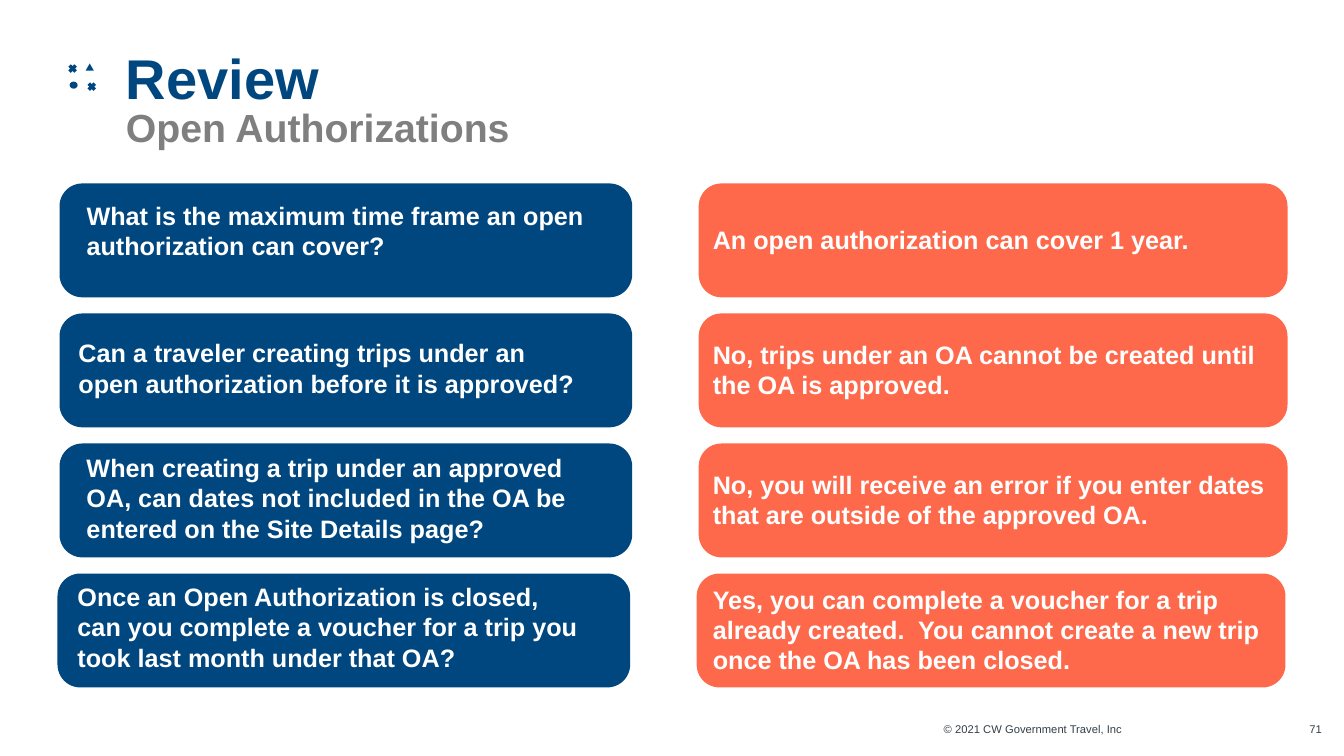
import pptx
import pptx.dml.color
import pptx.enum.shapes
import pptx.enum.text
import pptx.oxml
import pptx.oxml.ns
import pptx.util

Inches = pptx.util.Inches
Pt = pptx.util.Pt
RGBColor = pptx.dml.color.RGBColor
Shape = pptx.enum.shapes.MSO_SHAPE
Align = pptx.enum.text.PP_ALIGN
Anchor = pptx.enum.text.MSO_ANCHOR

NAVY = RGBColor(0x00, 0x46, 0x7F)
CORAL = RGBColor(0xFF, 0x69, 0x4B)
GRAY = RGBColor(0x7F, 0x7F, 0x7F)
SLATE = RGBColor(0x33, 0x3F, 0x48)
WHITE = RGBColor(0xFF, 0xFF, 0xFF)

TITLE = {"size": Pt(40), "bold": True, "color": NAVY}
SUBTITLE = {"size": Pt(28), "bold": True, "color": GRAY}
CARD_TEXT = {"size": Pt(18), "bold": True, "color": WHITE}
FOOTER = {"size": Pt(8), "bold": False, "color": SLATE}

HEAD = [
    (1.05, 0.73), (1.05, 0.8), (1.03, 0.87), (1, 0.93), (0.98, 1.01),
    (0.98, 1.07), (0.92, 1.11), (0.85, 1.14), (0.79, 1.18), (0.77, 1.14),
    (0.74, 1.1), (0.69, 1.08), (0.61, 1.07), (0.57, 1.04), (0.56, 1),
    (0.55, 0.95), (0.55, 0.91), (0.51, 0.89), (0.52, 0.85), (0.55, 0.8),
    (0.56, 0.75), (0.58, 0.69), (0.61, 0.61), (0.66, 0.56), (0.72, 0.54),
    (0.79, 0.52), (0.88, 0.54), (0.95, 0.58), (1.01, 0.64),
]
ROUTE = [(0.73, 0.85), (0.75, 0.8), (0.8, 0.78), (0.86, 0.74), (0.89, 0.69)]
CROSSES = [(0.72, 0.68), (0.91, 0.86)]

REVIEW = [
    ("What is the maximum time frame an open authorization can cover?",
     (0.17, 0.12, 5.32, 0.71), "An open authorization can cover 1 year."),
    ("Can a traveler creating trips under an open authorization before it is approved?",
     (0.09, 0.19, 5.24, 0.71),
     "No, trips under an OA cannot be created until the OA is approved."),
    ("When creating a trip under an approved OA, can dates not included in the OA be "
     "entered on the Site Details page?", (0.17, 0.04, 5.24, 1.01),
     "No, you will receive an error if you enter dates that are outside of the approved OA."),
    ("Once an Open Authorization is closed, can you complete a voucher for a trip you "
     "took last month under that OA?", (0.08, 0.03, 5.25, 1.01),
     "Yes, you can complete a voucher for a trip already created.  You cannot create "
     "a new trip once the OA has been closed."),
]


def add_span(para, text, style):
    """Add a run of text in the given style."""
    span = para.add_run()
    span.text = text
    span.font.name = "Arial"
    span.font.color.rgb = style["color"]
    for name in ("size", "bold"):
        setattr(span.font, name, style[name])


def add_text(page, box, text, style, inset=(0, 0), anchor=Anchor.TOP, align=Align.LEFT):
    """Add a wrapped text box and return its paragraph."""
    frame = page.shapes.add_textbox(*map(Inches, box)).text_frame
    across, down = map(Inches, inset)
    settings = {"word_wrap": True, "vertical_anchor": anchor, "margin_left": across,
                "margin_right": across, "margin_top": down, "margin_bottom": down}
    for name, value in settings.items():
        setattr(frame, name, value)
    para = frame.paragraphs[0]
    para.alignment = align
    add_span(para, text, style)
    return para


def add_solid(page, kind, box, color):
    """Add a filled preset shape without outline."""
    shape = page.shapes.add_shape(kind, *map(Inches, box))
    shape.shadow.inherit = False
    shape.fill.solid()
    shape.fill.fore_color.rgb = color
    shape.line.fill.background()
    return shape


def add_stroke(page, points, width, closed):
    """Add an unfilled navy outline through the points."""
    builder = page.shapes.build_freeform(*points[0], scale=Inches(1))
    builder.add_line_segments(points[1:], close=closed)
    stroke = builder.convert_to_shape()
    stroke.shadow.inherit = False
    stroke.fill.background()
    stroke.line.color.rgb = NAVY
    stroke.line.width = Pt(width)


def add_cross(page, center, reach):
    """Draw a small cross from two connectors."""
    x, y = center
    for rise in (reach, -reach):
        ends = (x - reach, y - rise, x + reach, y + rise)
        bar = page.shapes.add_connector(
            pptx.enum.shapes.MSO_CONNECTOR.STRAIGHT, *map(Inches, ends))
        bar.line.color.rgb = NAVY
        bar.line.width = Pt(2.5)
        bar.element.spPr.append(
            pptx.oxml.parse_xml(f"<a:effectLst {pptx.oxml.ns.nsdecls('a')}/>"))


def add_header(page, box):
    """Place the strategy icon and the two-line title."""
    add_stroke(page, HEAD, 3.6, True)
    add_stroke(page, ROUTE, 2, False)
    add_solid(page, Shape.OVAL, (0.69, 0.81, 0.08, 0.07), NAVY)
    add_solid(page, Shape.ISOSCELES_TRIANGLE, (0.85, 0.63, 0.08, 0.07), NAVY)
    for center in CROSSES:
        add_cross(page, center, 0.03)
    para = add_text(page, box, "Review", TITLE)
    para.line_spacing = 0.85
    para.add_line_break()
    add_span(para, "Open Authorizations", SUBTITLE)


def add_review_row(page, box, shift, question, question_box, answer):
    """Place a question card and its answer card in the row box."""
    left, top, width, height = box
    question_width, answer_width = 5.68, 5.84
    answer_left = left + width - answer_width
    cards = [(left, question_width, NAVY), (answer_left, answer_width, CORAL)]
    for card_left, card_width, color in cards:
        card = add_solid(page, Shape.ROUNDED_RECTANGLE,
                         (card_left + shift, top, card_width, height), color)
        card.adjustments[0] = 0.2
    x, y, text_width, text_height = question_box
    add_text(page, (left + x, top + y, text_width, text_height),
             question, CARD_TEXT, inset=(0.1, 0.05))
    add_text(page, (answer_left + 0.14, top - 0.01, 5.7, height),
             answer, CARD_TEXT, anchor=Anchor.MIDDLE)


def add_footer(page, box):
    """Place the copyright line and the page number."""
    left, top, width, height = box
    add_text(page, (left, top, 2.75, height), "© 2021 CW Government Travel, Inc",
             FOOTER, align=Align.RIGHT)
    add_text(page, (left + width - 0.23, top, 0.23, height), "71",
             FOOTER, align=Align.RIGHT)


def main():
    """Build the review slide and save it."""
    deck = pptx.Presentation()
    deck.slide_width, deck.slide_height = Inches(13.33), Inches(7.5)
    page = deck.slides.add_slide(deck.slide_layouts[6])
    add_header(page, (1.25, 0.53, 11.53, 0.92))
    for row, content in enumerate(REVIEW):
        shift = -0.02 if row == len(REVIEW) - 1 else 0
        add_review_row(page, (0.59, 1.82 + 1.29 * row, 12.18, 1.13), shift, *content)
    add_footer(page, (8.38, 7.17, 4.73, 0.14))
    deck.save("out.pptx")


if __name__ == "__main__":
    main()
